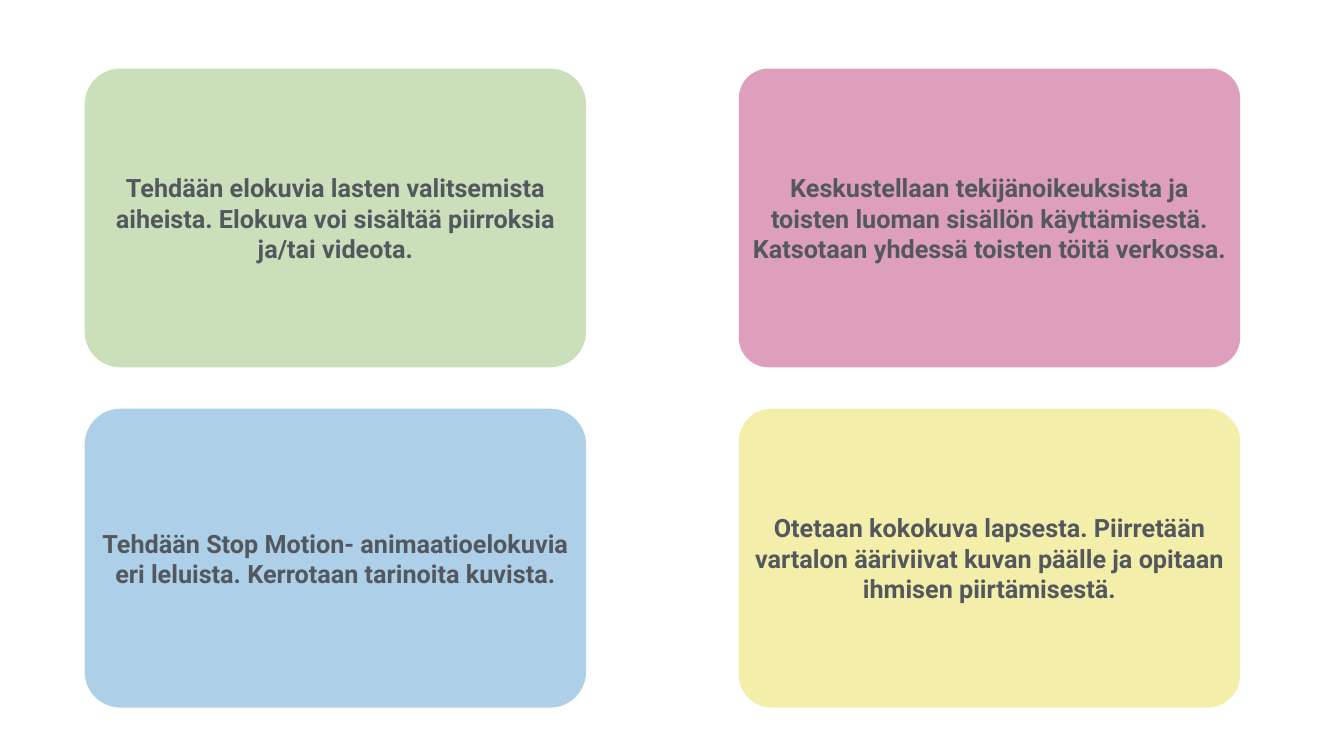
"""Build a slide with four coloured cards of film and picture activities."""
from pptx import Presentation
from pptx.dml.color import RGBColor
from pptx.enum.shapes import MSO_SHAPE
from pptx.enum.text import MSO_ANCHOR, PP_ALIGN
from pptx.util import Inches, Pt

GREEN = RGBColor(0xCB, 0xDF, 0xBA)
PINK = RGBColor(0xDE, 0x9F, 0xBC)
BLUE = RGBColor(0xAD, 0xCF, 0xE8)
YELLOW = RGBColor(0xF3, 0xEE, 0xA9)
GREY = RGBColor(0x53, 0x58, 0x5F)

CARDS = [
    (GREEN, 0.12, "Tehdään elokuvia lasten valitsemista aiheista. "
                  "Elokuva voi sisältää piirroksia ja/tai videota."),
    (PINK, 0.1, "Keskustellaan tekijänoikeuksista ja toisten luoman sisällön "
                "käyttämisestä. Katsotaan yhdessä toisten töitä verkossa."),
    (BLUE, 0.12, "Tehdään Stop Motion- animaatioelokuvia eri leluista. "
                 "Kerrotaan tarinoita kuvista."),
    (YELLOW, 0.11, "Otetaan kokokuva lapsesta. Piirretään vartalon ääriviivat "
                   "kuvan päälle ja opitaan ihmisen piirtämisestä."),
]
COLUMNS = 2
LEFT, TOP = 1.68, 1.36
WIDTH, HEIGHT = 9.95, 5.93
COLUMN_STEP, ROW_STEP = 12.98, 6.75
INSET = Inches(0.06)


def add_card(page, left, top, fill, rounding, text):
    card = page.shapes.add_shape(MSO_SHAPE.ROUNDED_RECTANGLE, Inches(left),
                                 Inches(top), Inches(WIDTH), Inches(HEIGHT))
    card.adjustments[0] = rounding
    card.shadow.inherit = False
    card.fill.solid()
    card.fill.fore_color.rgb = fill
    card.line.fill.background()

    frame = card.text_frame
    frame.word_wrap = True
    frame.vertical_anchor = MSO_ANCHOR.MIDDLE
    frame.margin_left = frame.margin_right = INSET
    frame.margin_top = frame.margin_bottom = INSET

    para = frame.paragraphs[0]
    para.text = text
    para.alignment = PP_ALIGN.CENTER
    para.font.name = "Roboto"
    para.font.size = Pt(36)
    para.font.bold = True
    para.font.color.rgb = GREY


def main():
    deck = Presentation()
    deck.slide_width, deck.slide_height = Inches(26.67), Inches(15)
    page = deck.slides.add_slide(deck.slide_layouts[6])
    for index, (fill, rounding, text) in enumerate(CARDS):
        row, column = divmod(index, COLUMNS)
        add_card(page, LEFT + column * COLUMN_STEP, TOP + row * ROW_STEP,
                 fill, rounding, text)
    deck.save("out.pptx")


if __name__ == "__main__":
    main()
